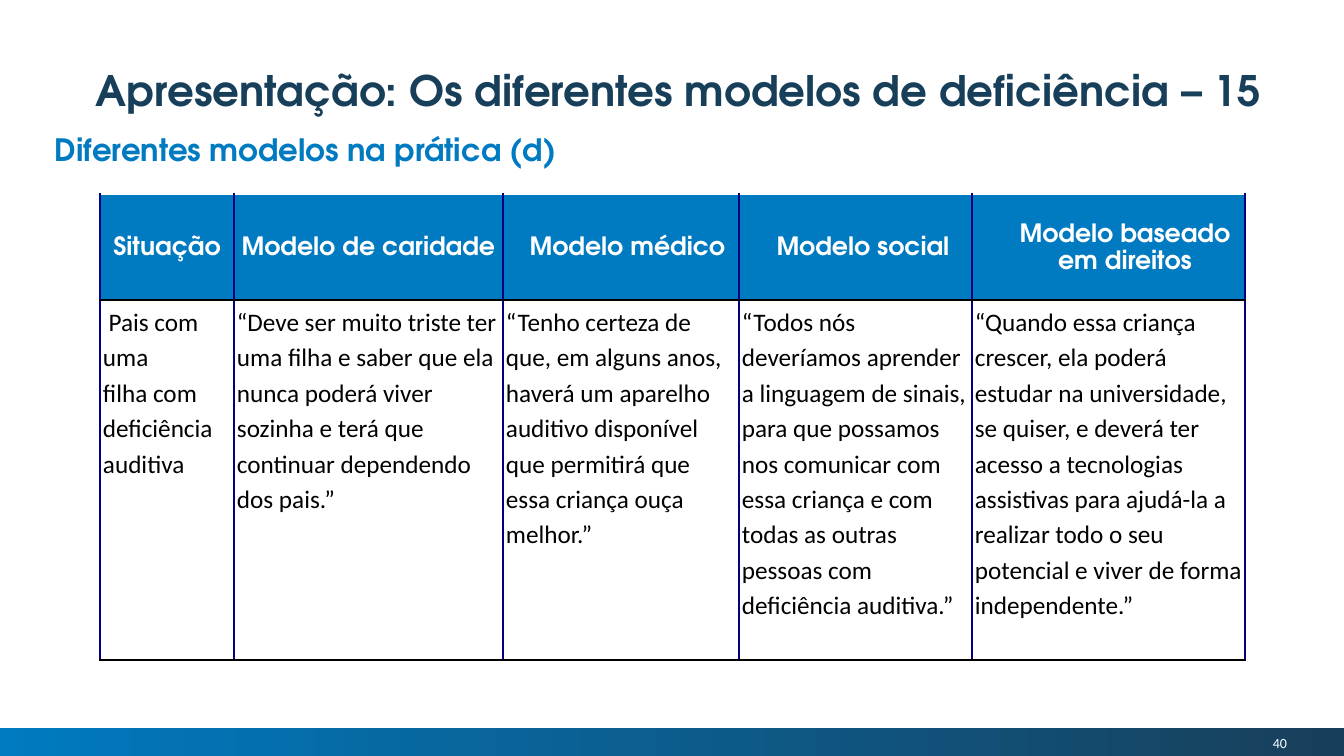
from dataclasses import dataclass

from lxml import etree
from pptx import Presentation
from pptx import util as u
from pptx.dml.color import RGBColor
from pptx.enum import shapes, text
from pptx.oxml.ns import qn

PX = 914400 / 100.8


@dataclass
class Theme:
    """Colours, fonts and type sizes of the slide."""
    blue: str = "007AC0"
    navy: str = "183F5A"
    edge: str = "000080"
    black: str = "000000"
    white: str = "FFFFFF"
    head: str = "TeX Gyre Adventor"
    body: str = "Calibri"
    title: int = 30
    sub: int = 22
    cell: int = 18
    page: int = 10


T = Theme()
HEADS = [("Situação", 0), ("Modelo de caridade", 0), ("Modelo médico", 13),
         ("Modelo social", 15), ("Modelo baseado em direitos", 33)]
CELLS = [
    [" Pais com uma", "filha com deficiência", "auditiva"],
    ["“Deve ser muito triste ter uma filha e saber que ela nunca poderá viver "
     "sozinha e terá que continuar dependendo dos pais.”"],
    ["“Tenho certeza de que, em alguns anos, haverá um aparelho auditivo "
     "disponível que permitirá que essa criança ouça melhor.”"],
    ["“Todos nós deveríamos aprender a linguagem de sinais, para que possamos "
     "nos comunicar com essa criança e com todas as outras pessoas com "
     "deficiência auditiva.”"],
    ["“Quando essa criança crescer, ela poderá estudar na universidade, se "
     "quiser, e deverá ter acesso a tecnologias assistivas para ajudá-la a "
     "realizar todo o seu potencial e viver de forma independente.”"],
]
WIDTHS = [134, 269, 236, 233, 273]


def px(n):
    """Turn px into EMU."""
    return u.Emu(round(n * PX))


def inset(obj, x, y):
    """Set the margins of a frame or cell."""
    obj.margin_left = obj.margin_right = px(x)
    obj.margin_top = obj.margin_bottom = px(y)


def write(frame, lines, size, font, hue, bold=False, align="LEFT", space=1.0, left=0, first=0):
    """Fill a text frame with one run per paragraph."""
    frame.word_wrap = True
    for i, line in enumerate(lines):
        par = frame.paragraphs[0] if i == 0 else frame.add_paragraph()
        par.alignment = getattr(text.PP_ALIGN, align)
        par.line_spacing = space
        if left:
            props = par._p.get_or_add_pPr()
            props.set("marL", str(px(left)))
            props.set("indent", str(px(first)))
        run = par.add_run()
        run.text = line
        run.font.size = u.Pt(size)
        run.font.name = font
        run.font.bold = bold
        run.font.color.rgb = RGBColor.from_string(hue)


def label(slide, box, line, size, font, hue, pad=(0, 0), anchor="TOP", **style):
    """Place a single line of text in a box."""
    frame = slide.shapes.add_textbox(*map(px, box)).text_frame
    inset(frame, *pad)
    frame.vertical_anchor = getattr(text.MSO_ANCHOR, anchor)
    write(frame, [line], size, font, hue, **style)


def footer(slide, box, page):
    """Draw the gradient band and the page number."""
    x, y, w, h = box
    band = slide.shapes.add_shape(shapes.MSO_SHAPE.RECTANGLE, *map(px, box))
    band.shadow.inherit = False
    band.line.fill.background()
    band.fill.gradient()
    band.fill.gradient_angle = 0
    for stop, hue, pos in zip(band.fill.gradient_stops, (T.blue, T.navy), (0, 1)):
        stop.color.rgb = RGBColor.from_string(hue)
        stop.position = pos
    label(slide, (x + w - 238, y + 3, 181, 24), page, T.page, T.body, T.white,
          anchor="MIDDLE", align="RIGHT")


def border(cell, sides):
    """Outline the given sides of a cell ahead of its fill."""
    props = cell._tc.get_or_add_tcPr()
    for i, side in enumerate(sides):
        line = etree.Element(qn("a:ln" + side), w=str(u.Pt(1)))
        fill = etree.SubElement(line, qn("a:solidFill"))
        hue = T.edge if side in "LR" else T.black
        etree.SubElement(fill, qn("a:srgbClr"), val=hue)
        props.insert(i, line)


def paint(cell, hue, sides):
    """Fill and outline a cell."""
    cell.fill.solid()
    cell.fill.fore_color.rgb = RGBColor.from_string(hue)
    border(cell, sides)


def grid(slide, box):
    """Draw the table of models."""
    table = slide.shapes.add_table(2, len(HEADS), *map(px, box)).table
    table.horz_banding = False
    table.rows[0].height = px(106)
    table.rows[1].height = px(box[3] - 106)
    for i, ((head, left), lines, wide) in enumerate(zip(HEADS, CELLS, WIDTHS)):
        table.columns[i].width = px(wide)
        top, low = table.cell(0, i), table.cell(1, i)
        inset(top, 0, 0)
        inset(low, 3, 3)
        top.vertical_anchor = text.MSO_ANCHOR.MIDDLE
        paint(top, T.blue, "LRB")
        paint(low, T.white, "LRTB")
        write(top.text_frame, [head], T.cell, T.head, T.white, bold=True,
              align="CENTER", space=1.15, left=left)
        write(low.text_frame, lines, T.cell, T.body, T.black, space=1.15)


def main():
    """Build and save the slide."""
    deck = Presentation()
    deck.slide_width, deck.slide_height = px(1344), px(756)
    slide = deck.slides.add_slide(deck.slide_layouts[6])
    footer(slide, (0, 728, 1344, 28), "40")
    label(slide, (55, 129, 1232, 39), "Diferentes modelos na prática (d)", T.sub, T.head,
          T.blue, anchor="BOTTOM", bold=True, space=1.5, left=31, first=-31)
    grid(slide, (100, 194, sum(WIDTHS), 466))
    label(slide, (43, 55, 1271, 47), "Apresentação: Os diferentes modelos de deficiência – 15",
          T.title, T.head, T.navy, pad=(10, 5), bold=True, align="CENTER", space=1.1)
    deck.save("out.pptx")


if __name__ == "__main__":
    main()
